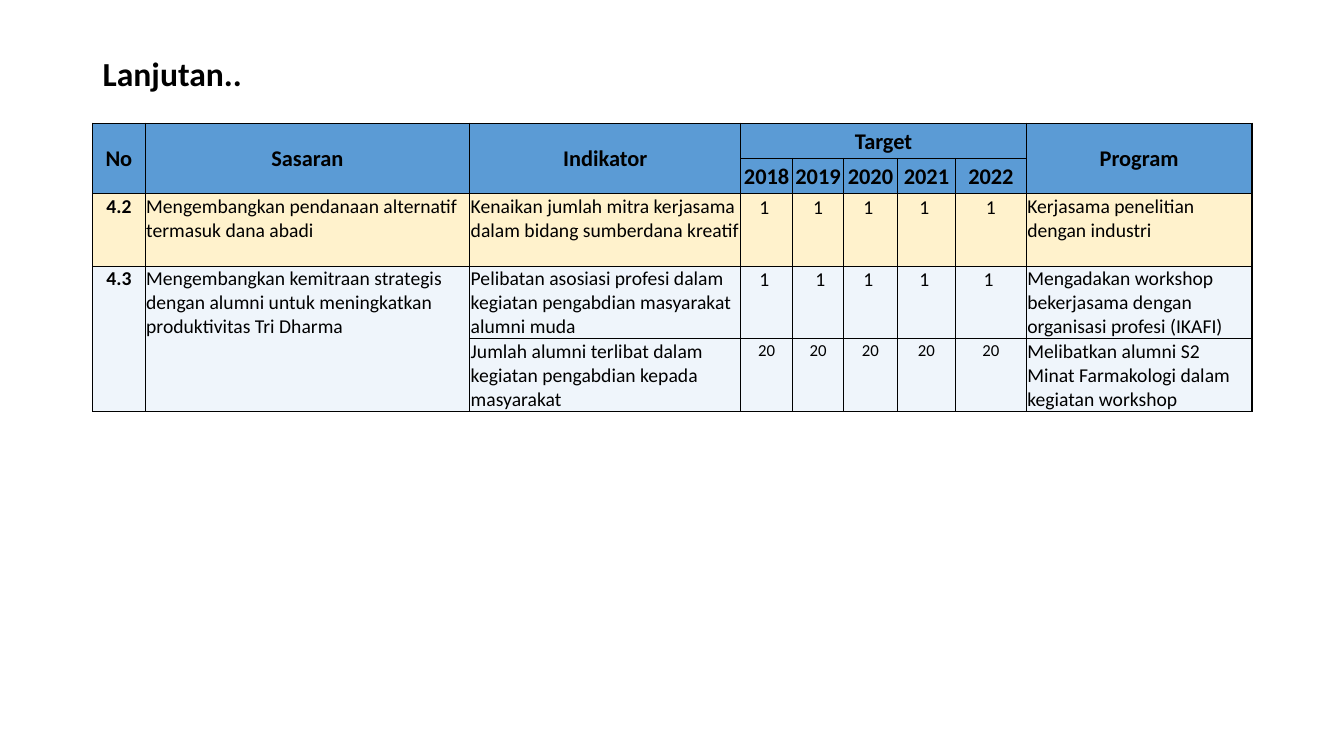
from lxml import etree
from pptx import Presentation as Deck
from pptx.dml.color import RGBColor as Rgb
from pptx.enum.text import MSO_ANCHOR as Anchor, PP_ALIGN as Align
from pptx.oxml.ns import qn
from pptx.util import Inches, Pt

INK = {"text": "000000", "head": "5B9BD5", "gold": "FFF2CC", "pale": "EFF5FB"}
WIDTHS = [3.9, 24.15, 20.18, 3.83, 3.83, 3.98, 4.35, 5.25, 16.8]
HEIGHTS = [4.67, 4.67, 9.6, 9.6, 9.6]
TINTS = ["head", "head", "gold", "pale", "pale"]
ROWS = [
    ["No", "Sasaran", "Indikator", "Target", "", "", "", "", "Program"],
    ["", "", "", "2018", "2019", "2020", "2021", "2022", ""],
    ["4.2", "Mengembangkan pendanaan alternatif termasuk dana abadi",
     "Kenaikan jumlah mitra kerjasama dalam bidang sumberdana kreatif",
     "1 ", "1", "1 ", "1 ", "1", "Kerjasama penelitian dengan industri"],
    ["4.3", "Mengembangkan kemitraan strategis dengan alumni untuk "
     "meningkatkan produktivitas Tri Dharma",
     "Pelibatan asosiasi profesi dalam kegiatan pengabdian masyarakat alumni muda",
     "1 ", " 1", "1 ", "1 ", "1 ",
     "Mengadakan workshop bekerjasama dengan organisasi profesi (IKAFI)"],
    ["", "", "Jumlah alumni terlibat dalam kegiatan pengabdian kepada masyarakat",
     "20", "20", "20", "20", "20",
     "Melibatkan alumni S2 Minat Farmakologi dalam kegiatan workshop"],
]
MERGES = [(0, 0, 1, 0), (0, 1, 1, 1), (0, 2, 1, 2), (0, 3, 0, 7),
          (0, 8, 1, 8), (3, 0, 4, 0), (3, 1, 4, 1)]


def write(frame, text, size=14, bold=False, align=Align.LEFT, line=1.0, after=0):
    para = frame.paragraphs[0]
    para.alignment, para.line_spacing, para.space_after = align, line, Pt(after)
    font = para.font
    if text:
        run = para.add_run()
        run.text = text
        font = run.font
    font.name, font.size, font.bold = "Calibri", Pt(size), bold
    font.color.rgb = Rgb.from_string(INK["text"])


class Page:
    """Draw on one slide, with lengths in percent of its width and height."""

    def __init__(self, deck):
        self.wide, self.high = deck.slide_width, deck.slide_height
        self.slide = deck.slides.add_slide(deck.slide_layouts[6])

    def x(self, share):
        return round(self.wide * share / 100)

    def y(self, share):
        return round(self.high * share / 100)

    def title(self, text, left, top, width, height):
        box = self.slide.shapes.add_textbox(
            self.x(left), self.y(top), self.x(width), self.y(height))
        frame = box.text_frame
        frame.word_wrap = True
        frame.vertical_anchor = Anchor.MIDDLE
        write(frame, text, size=24, bold=True, line=0.9)

    def border(self, cell):
        props = cell._tc.get_or_add_tcPr()
        for side in ("lnL", "lnR", "lnT", "lnB"):
            line = etree.SubElement(props, qn("a:" + side), w=str(Pt(1)))
            fill = etree.SubElement(line, qn("a:solidFill"))
            etree.SubElement(fill, qn("a:srgbClr"), val=INK["text"])

    def cell(self, cell, text, row, col):
        head, year = row < 2, row > 1 and 3 <= col <= 7
        self.border(cell)
        cell.fill.solid()
        cell.fill.fore_color.rgb = Rgb.from_string(INK[TINTS[row]])
        cell.margin_left = cell.margin_right = self.x(0.3 if year else 0.08)
        cell.margin_top, cell.margin_bottom = self.y(0 if year else 0.13), 0
        cell.vertical_anchor = Anchor.MIDDLE if head else Anchor.TOP
        write(cell.text_frame, text,
              size=16 if head else 12 if year and row == 4 else 14,
              bold=head or col == 0,
              align=Align.CENTER if head or year or col == 0 else Align.LEFT,
              line=1.07 if year else 1.0, after=8 if year else 0)

    def table(self, left, top):
        grid = self.slide.shapes.add_table(
            len(ROWS), len(WIDTHS), self.x(left), self.y(top),
            self.x(sum(WIDTHS)), self.y(sum(HEIGHTS))).table
        grid.first_row = grid.horz_banding = False
        for col, width in zip(grid.columns, WIDTHS):
            col.width = self.x(width)
        for row, height in zip(grid.rows, HEIGHTS):
            row.height = self.y(height)
        for r, texts in enumerate(ROWS):
            for c, text in enumerate(texts):
                self.cell(grid.cell(r, c), text, r, c)
        for r, c, low, right in MERGES:
            grid.cell(r, c).merge(grid.cell(low, right))


def main():
    deck = Deck()
    deck.slide_width, deck.slide_height = Inches(13.33), Inches(7.5)
    page = Page(deck)
    page.title("Lanjutan..", 6.9, 5.33, 86.27, 9.47)
    page.table(6.9, 16.3)
    deck.save("out.pptx")


if __name__ == "__main__":
    main()
